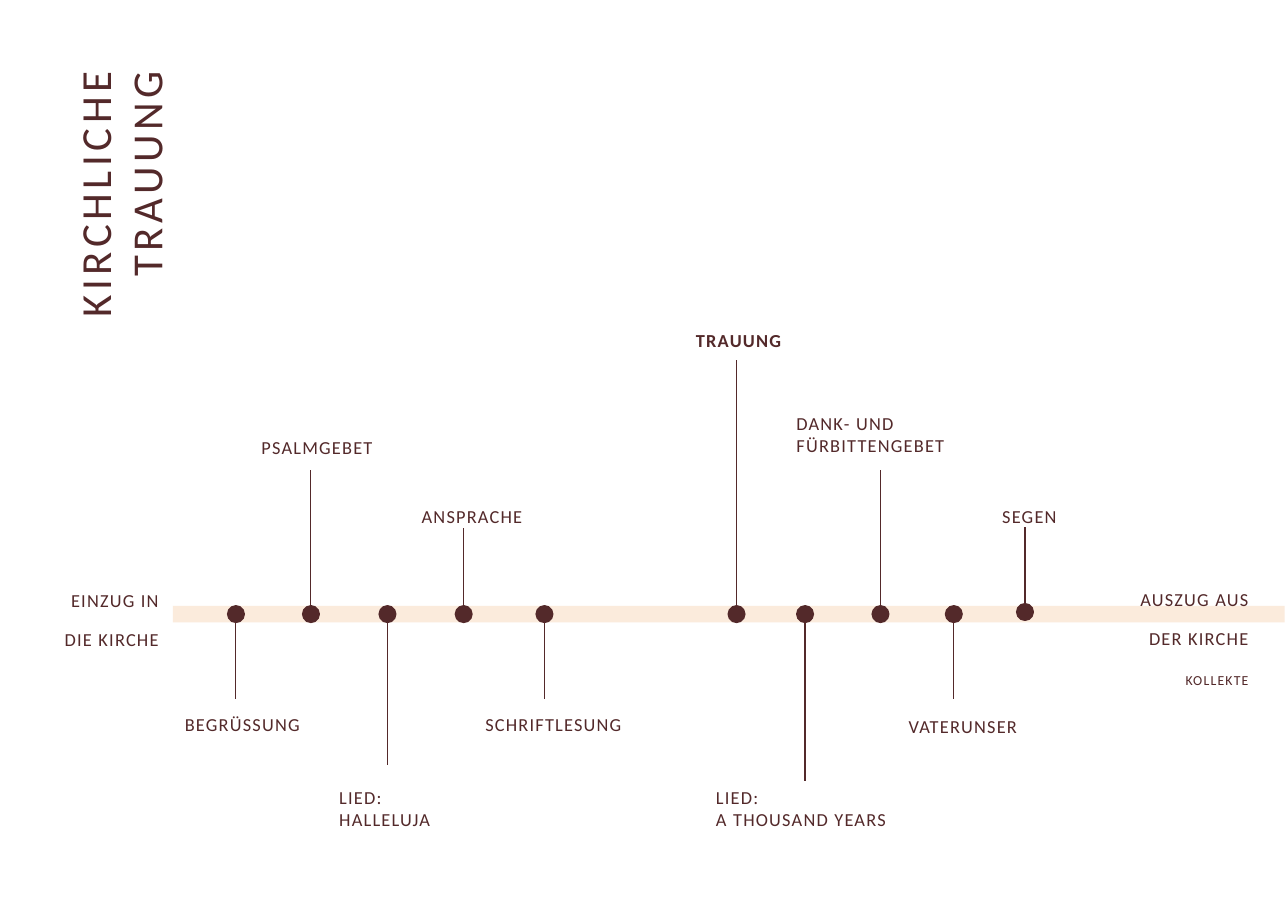
from pptx import Presentation
from pptx.dml.color import RGBColor
from pptx.enum.shapes import MSO_CONNECTOR, MSO_SHAPE
from pptx.enum.text import MSO_AUTO_SIZE, PP_ALIGN
from pptx.oxml.ns import qn
from pptx.util import Pt
from lxml import etree

BROWN, CREAM = "53292A", "FBEBDC"
AXIS_Y = 401.4
DOT = 10.8


def rgb(value):
    return RGBColor.from_string(value)


def add_text(s, left, top, width, height, lines, align=PP_ALIGN.RIGHT,
             leading=25.4, size=12, spacing=0.8, bold=False):
    """Add a letter-spaced text box with one paragraph per line."""
    box = s.shapes.add_textbox(Pt(left), Pt(top), Pt(width), Pt(height))
    tf = box.text_frame
    tf.word_wrap = False
    tf.auto_size = MSO_AUTO_SIZE.SHAPE_TO_FIT_TEXT
    for i, line in enumerate(lines):
        p = tf.paragraphs[0] if i == 0 else tf.add_paragraph()
        r = p.add_run()
        r.text = line
        r._r.get_or_add_rPr().set("spc", str(round(spacing * 100)))
        p.alignment = align
        if leading:
            p.line_spacing = Pt(leading)
        p.font.name = "Calibri"
        p.font.size = Pt(size)
        p.font.bold = bold
        p.font.color.rgb = rgb(BROWN)
    return box


prs = Presentation()
prs.slide_width, prs.slide_height = Pt(841.68), Pt(595.44)
s = prs.slides.add_slide(prs.slide_layouts[6])

band = s.shapes.add_shape(MSO_SHAPE.RECTANGLE, Pt(113), Pt(396), Pt(726.5), Pt(10.8))
band.shadow.inherit = False
band.fill.solid()
band.fill.fore_color.rgb = rgb(CREAM)
band.line.fill.background()

# Dot x, dot y, far end of the stem, label left, top and width, label lines
stations = [
    (154.2, AXIS_Y, 457.2, 110.2, 451.4, 92.9, ["BEGRÜSSUNG"]),
    (203.2, AXIS_Y, 307.4, 160.6, 270.7, 90, ["PSALMGEBET"]),
    (253.2, AXIS_Y, 499.7, 214.6, 510.5, 77, ["LIED:", "HALLELUJA"]),
    (303, AXIS_Y, 344.9, 265, 315.4, 83.5, ["ANSPRACHE"]),
    (355.8, AXIS_Y, 457.2, 306.7, 451.4, 106.6, ["SCHRIFTLESUNG"]),
    (481.3, AXIS_Y, 235.4, 445.7, 200.9, 72, ["TRAUUNG"]),
    (526.1, AXIS_Y, 510.5, 460.8, 510.5, 130.3, ["LIED:", "A THOUSAND YEARS"]),
    (575.4, AXIS_Y, 307.4, 513.4, 265.7, 115.2, ["DANK- UND", "FÜRBITTENGEBET"]),
    (623.3, AXIS_Y, 457.2, 583.2, 452.9, 88.6, ["VATERUNSER"]),
    (669.8, AXIS_Y - 1.4, 344.2, 645.8, 315.4, 51.8, ["SEGEN"]),
]
for x, y, stem_end, left, top, width, lines in stations:
    stem = s.shapes.add_connector(MSO_CONNECTOR.STRAIGHT, Pt(x), Pt(y), Pt(x), Pt(stem_end))
    stem.line.color.rgb = rgb(BROWN)
    stem.line.width = Pt(0.75)
    etree.SubElement(stem._element.spPr, qn("a:effectLst"))

    dot = s.shapes.add_shape(MSO_SHAPE.OVAL, Pt(x - DOT / 2), Pt(y - DOT / 2), Pt(DOT), Pt(DOT))
    dot.shadow.inherit = False
    dot.fill.solid()
    dot.fill.fore_color.rgb = rgb(BROWN)
    dot.line.color.rgb = rgb(BROWN)
    dot.line.width = Pt(1)

    if len(lines) > 1:
        add_text(s, left, top, width, 36, lines, align=PP_ALIGN.LEFT, leading=None)
    else:
        add_text(s, left, top, width, 29.5, lines, bold=lines == ["TRAUUNG"])

add_text(s, 31.7, 370.8, 79.2, 54.7, ["EINZUG IN", "DIE KIRCHE"])
exit_label = add_text(s, 734.4, 370.1, 88.6, 79.2, ["AUSZUG AUS", "DER KIRCHE", "KOLLEKTE"])
exit_label.text_frame.paragraphs[2].font.size = Pt(9)

title = add_text(s, -11.5, 92.2, 180, 74.9, ["KIRCHLICHE", "TRAUUNG"],
                 leading=None, size=28, spacing=3)
title.rotation = 270

prs.save("out.pptx")
